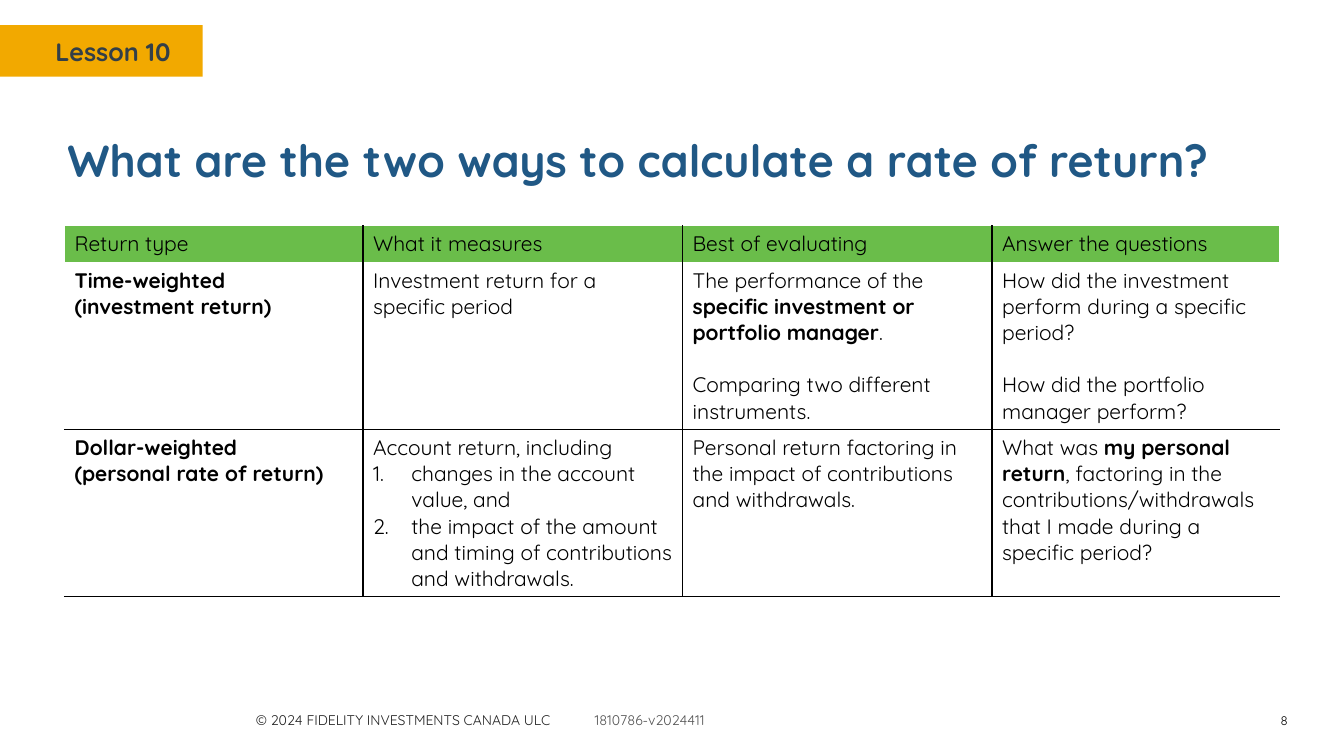
from lxml import etree
from pptx import Presentation
from pptx.dml.color import RGBColor
from pptx.enum import shapes, text
from pptx.oxml.ns import qn
from pptx.util import Inches, Pt

FONT = "Quicksand"
BLACK = RGBColor(0x00, 0x00, 0x00)
WHITE = RGBColor(0xFF, 0xFF, 0xFF)
AMBER = RGBColor(0xF2, 0xA9, 0x00)
SLATE = RGBColor(0x33, 0x3F, 0x48)
BLUE = RGBColor(0x20, 0x58, 0x85)
GREEN = RGBColor(0x6A, 0xBD, 0x4A)
INK = RGBColor(0x22, 0x22, 0x22)
GREY = RGBColor(0x54, 0x54, 0x54)

LESSON = "Lesson 10"
TITLE = "What are the two ways to calculate a rate of return?"
COPYRIGHT = "© 2024 FIDELITY INVESTMENTS CANADA ULC"
VERSION = "1810786-v2024411"
PAGE = "8"

# Each cell lists its paragraphs; ** encloses bold words,
# "# " opens a numbered item and "> " a paragraph set one line lower.
RETURNS = [
    [["Return type"], ["What it measures"], ["Best of evaluating"], ["Answer the questions"]],
    [
        ["**Time-weighted**", "**(investment return)**"],
        ["Investment return for a specific period"],
        ["The performance of the **specific investment or portfolio manager**.",
         "> Comparing two different instruments."],
        ["How did the investment perform during a specific period?",
         "> How did the portfolio manager perform?"],
    ],
    [
        ["**Dollar-weighted**", "**(personal rate of return)**"],
        ["Account return, including",
         "# changes in the account value, and",
         "# the impact of the amount and timing of contributions and withdrawals."],
        ["Personal return factoring in the impact of contributions and withdrawals."],
        ["What was **my personal return**, factoring in the contributions/withdrawals "
         "that I made during a specific period?"],
    ],
]
COLUMN_WIDTHS = [2.96, 3.17, 3.07, 2.85]
ROW_HEIGHTS = [0.36, 1.66, 1.66]
TABLE_LEFT, TABLE_TOP = 0.64, 2.24
TABLE_SIZE = 15
LINE_GAP = Pt(18.75)
NUMBER_INDENT = Inches(0.38)


def add_run(paragraph, words, size, color, bold=False):
    run = paragraph.add_run()
    run.text = words
    for name, value in {"name": FONT, "size": Pt(size), "bold": bold}.items():
        setattr(run.font, name, value)
    run.font.color.rgb = color


def add_label(slide, box, words, size, color, bold=False, **frame_format):
    """Add a one-paragraph text box and return its paragraph."""
    frame = slide.shapes.add_textbox(*map(Inches, box)).text_frame
    for name, value in {"word_wrap": True, **frame_format}.items():
        setattr(frame, name, value)
    paragraph = frame.paragraphs[0]
    add_run(paragraph, words, size, color, bold)
    return paragraph


def add_tab_stop(paragraph, position):
    stops = etree.SubElement(paragraph._p.get_or_add_pPr(), qn("a:tabLst"))
    etree.SubElement(stops, qn("a:tab"), pos=str(Inches(position)), algn="l")


def number_item(paragraph):
    properties = paragraph._p.get_or_add_pPr()
    properties.set("marL", str(NUMBER_INDENT))
    properties.set("indent", str(-NUMBER_INDENT))
    etree.SubElement(properties, qn("a:buFont"), typeface="+mj-lt")
    etree.SubElement(properties, qn("a:buAutoNum"), type="arabicPeriod")


def fill_cell(cell, paragraphs):
    frame = cell.text_frame
    for index, words in enumerate(paragraphs):
        paragraph = frame.add_paragraph() if index else frame.paragraphs[0]
        if words.startswith("# "):
            number_item(paragraph)
        elif words.startswith("> "):
            paragraph.space_before = LINE_GAP
        for part, piece in enumerate(words.removeprefix("# ").removeprefix("> ").split("**")):
            if piece:
                add_run(paragraph, piece, TABLE_SIZE, BLACK, part % 2 == 1)


def set_borders(cell, colors):
    """Draw the left, right, top and bottom borders; None leaves a side bare."""
    properties = cell._tc.get_or_add_tcPr()
    for position, (side, color) in enumerate(zip("LRTB", colors)):
        line = etree.Element(qn(f"a:ln{side}"), w=str(Pt(1) if color else 0))
        if color:
            solid = etree.SubElement(line, qn("a:solidFill"))
            etree.SubElement(solid, qn("a:srgbClr"), val=str(color))
        else:
            etree.SubElement(line, qn("a:noFill"))
        properties.insert(position, line)


def add_returns_table(slide):
    rows, columns = len(ROW_HEIGHTS), len(COLUMN_WIDTHS)
    box = TABLE_LEFT, TABLE_TOP, sum(COLUMN_WIDTHS), sum(ROW_HEIGHTS)
    table = slide.shapes.add_table(rows, columns, *map(Inches, box)).table
    table.first_row = table.horz_banding = False
    for column, width in zip(table.columns, COLUMN_WIDTHS):
        column.width = Inches(width)
    for r, height in enumerate(ROW_HEIGHTS):
        table.rows[r].height = Inches(height)
        for c in range(columns):
            cell = table.cell(r, c)
            fill_cell(cell, RETURNS[r][c])
            if r == 0:
                cell.fill.solid()
                cell.fill.fore_color.rgb = GREEN
            else:
                cell.fill.background()
            set_borders(cell, [
                BLACK if c else WHITE,
                BLACK if c < columns - 1 else WHITE,
                [WHITE, None, BLACK][r],
                BLACK if r else None,
            ])


def main():
    deck = Presentation()
    deck.slide_width, deck.slide_height = Inches(13.33), Inches(7.5)
    slide = deck.slides.add_slide(deck.slide_layouts[6])

    lesson_tab = slide.shapes.add_shape(
        shapes.MSO_SHAPE.RECTANGLE, *map(Inches, (0, 0.25, 2.01, 0.51)))
    lesson_tab.shadow.inherit = False
    lesson_tab.fill.solid()
    lesson_tab.fill.fore_color.rgb = AMBER
    lesson_tab.line.fill.background()
    add_label(slide, (0.45, 0.31, 1.57, 0.4), LESSON, 18, SLATE, True)

    footer = add_label(slide, (2.44, 7.01, 6.67, 0.27), COPYRIGHT, 10, INK)
    add_tab_stop(footer, 3.36)
    add_run(footer, "\t" + VERSION, 10, GREY)

    add_label(slide, (0.57, 1.27, 12.2, 0.73), TITLE, 32, BLUE, True)
    page = add_label(slide, (12.17, 7.06, 0.7, 0.18), PAGE, 9, BLACK,
                     vertical_anchor=text.MSO_ANCHOR.MIDDLE, margin_top=0, margin_bottom=0)
    page.alignment = text.PP_ALIGN.RIGHT

    add_returns_table(slide)
    deck.save("out.pptx")


if __name__ == "__main__":
    main()
